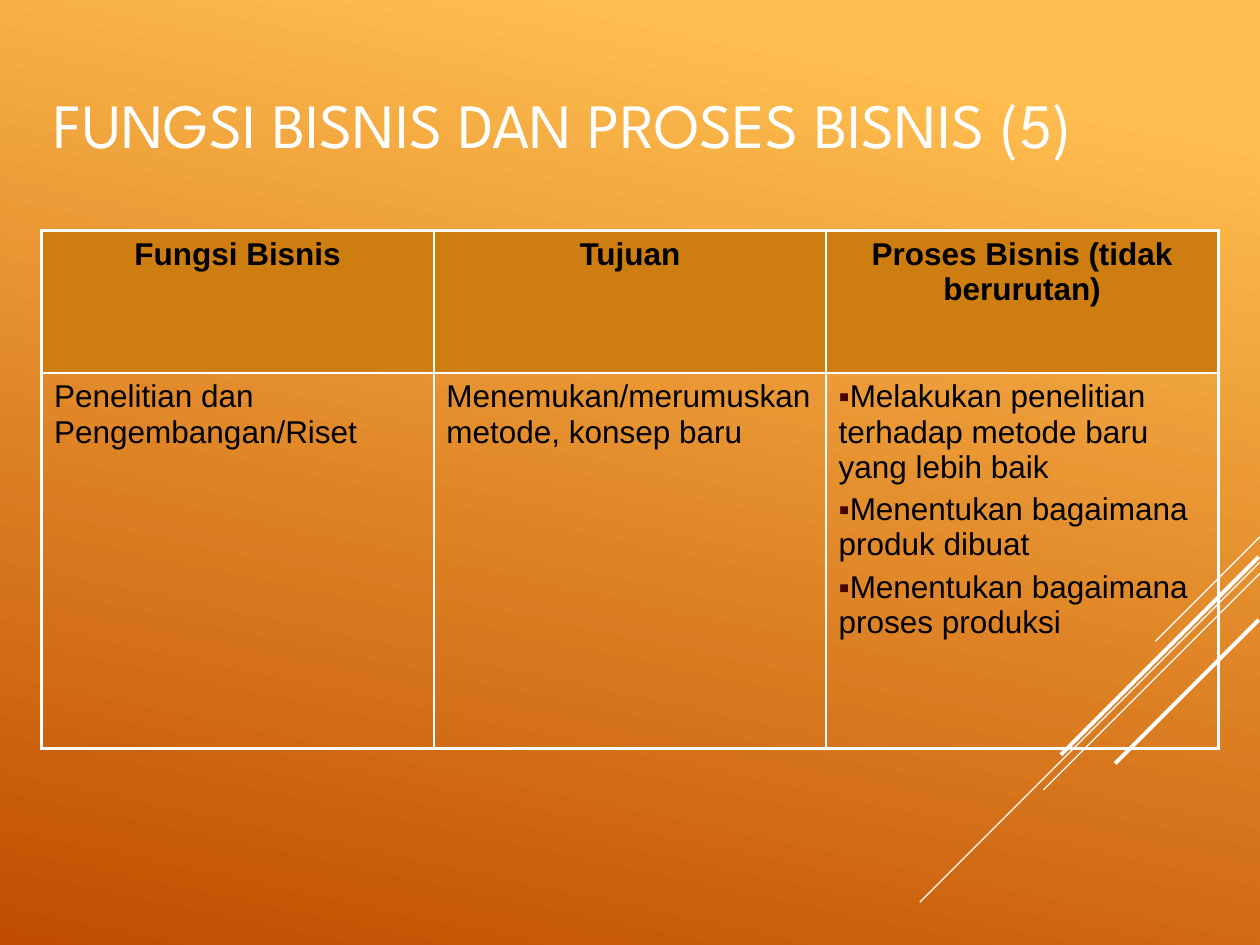
from lxml.etree import SubElement
from pptx import Presentation
from pptx.dml.color import RGBColor
from pptx.enum.shapes import MSO_CONNECTOR
from pptx.enum.text import MSO_ANCHOR as Anchor, PP_ALIGN as Align
from pptx.oxml.ns import qn
from pptx.util import Inches, Pt

WHITE, BLACK = "FFFFFF", "000000"
HEADER_FILL, BULLET_COLOR = "CE7D10", "460402"
THIN, THICK = 1, 2.25

HEADINGS = ["Fungsi Bisnis", "Tujuan", "Proses Bisnis (tidak berurutan)"]
DETAILS = [
    ["Penelitian dan Pengembangan/Riset"],
    ["Menemukan/merumuskan metode, konsep baru"],
    ["Melakukan penelitian terhadap metode baru yang lebih baik",
     "Menentukan bagaimana produk dibuat",
     "Menentukan bagaimana proses produksi"],
]
# Start x, start y, diagonal run to the lower left, line width
STRIPES = [
    (10, 4.26, 0.83, 0.75),
    (10, 4.46, 2.7, 0.75),
    (10, 4.55, 1.72, 0.75),
    (9.99, 4.42, 1.57, THICK),
    (9.99, 4.92, 1.14, THICK),
]


def rgb(color):
    return RGBColor.from_string(color)


def format_font(font, color, **values):
    for name, value in values.items():
        setattr(font, name, value)
    font.color.rgb = rgb(color)


def paint_background(slide):
    fill = slide.background.fill
    fill.gradient()
    fill.gradient_angle = 360 - 102
    for stop, (position, color) in zip(fill.gradient_stops, [(0.1, "FFBF50"), (1, "C04D00")]):
        stop.position = position
        stop.color.rgb = rgb(color)


def add_stripes(slide):
    for x, y, run, width in STRIPES:
        stripe = slide.shapes.add_connector(
            MSO_CONNECTOR.STRAIGHT, Inches(x), Inches(y), Inches(x - run), Inches(y + run))
        stripe.line.color.rgb = rgb(WHITE)
        stripe.line.width = Pt(width)
        SubElement(stripe._element.spPr, qn("a:effectLst"))


def add_title(slide, left, top, width, height):
    frame = slide.shapes.add_textbox(
        Inches(left), Inches(top), Inches(width), Inches(height)).text_frame
    frame.word_wrap = True
    frame.vertical_anchor = Anchor.MIDDLE
    title = frame.paragraphs[0].add_run()
    title.text = "FUNGSI BISNIS DAN PROSES BISNIS (5)"
    format_font(title.font, WHITE, name="League Spartan", size=Pt(36))


def set_borders(cell, widths):
    """Draw white borders; widths maps the sides L, R, T, B to points."""
    properties = cell._tc.get_or_add_tcPr()
    for side, width in widths.items():
        border = SubElement(properties, qn(f"a:ln{side}"), w=str(Pt(width)))
        SubElement(SubElement(border, qn("a:solidFill")), qn("a:srgbClr"), val=WHITE)


def add_bullet(paragraph):
    properties = paragraph._p.get_or_add_pPr()
    SubElement(SubElement(properties, qn("a:buClr")), qn("a:srgbClr"), val=BULLET_COLOR)
    SubElement(properties, qn("a:buFont"), typeface="Arial")
    SubElement(properties, qn("a:buChar"), char="▪")


def write_cell(cell, lines, is_header):
    frame = cell.text_frame
    frame.text = "\n".join(lines)
    for paragraph in frame.paragraphs:
        paragraph.alignment = Align.CENTER if is_header else Align.LEFT
        paragraph.space_before = Pt(4)
        if len(lines) > 1:
            add_bullet(paragraph)
        format_font(paragraph.runs[0].font, BLACK, name="Arial", size=Pt(18), bold=is_header)


def add_process_table(slide, left, top, width, row_heights):
    rows = [[[heading] for heading in HEADINGS], DETAILS]
    last_row, last_column = len(rows) - 1, len(HEADINGS) - 1
    table = slide.shapes.add_table(
        len(rows), len(HEADINGS), Inches(left), Inches(top),
        Inches(width), Inches(sum(row_heights))).table
    table.first_row = table.horz_banding = False
    for r, (height, row) in enumerate(zip(row_heights, rows)):
        table.rows[r].height = Inches(height)
        for c, lines in enumerate(row):
            cell = table.cell(r, c)
            outer = {"L": c == 0, "R": c == last_column, "T": r == 0, "B": r == last_row}
            set_borders(cell, {side: THICK if edge else THIN for side, edge in outer.items()})
            if r == 0:
                cell.fill.solid()
                cell.fill.fore_color.rgb = rgb(HEADER_FILL)
            else:
                cell.fill.background()
            write_cell(cell, lines, is_header=r == 0)


def main():
    deck = Presentation()
    deck.slide_width, deck.slide_height = Inches(10), Inches(7.5)
    slide = deck.slides.add_slide(deck.slide_layouts[6])
    paint_background(slide)
    add_stripes(slide)
    add_title(slide, 0.33, 0.25, 9.31, 1.45)
    add_process_table(slide, 0.33, 1.83, 9.34, [1.13, 2.98])
    deck.save("out.pptx")


if __name__ == "__main__":
    main()
